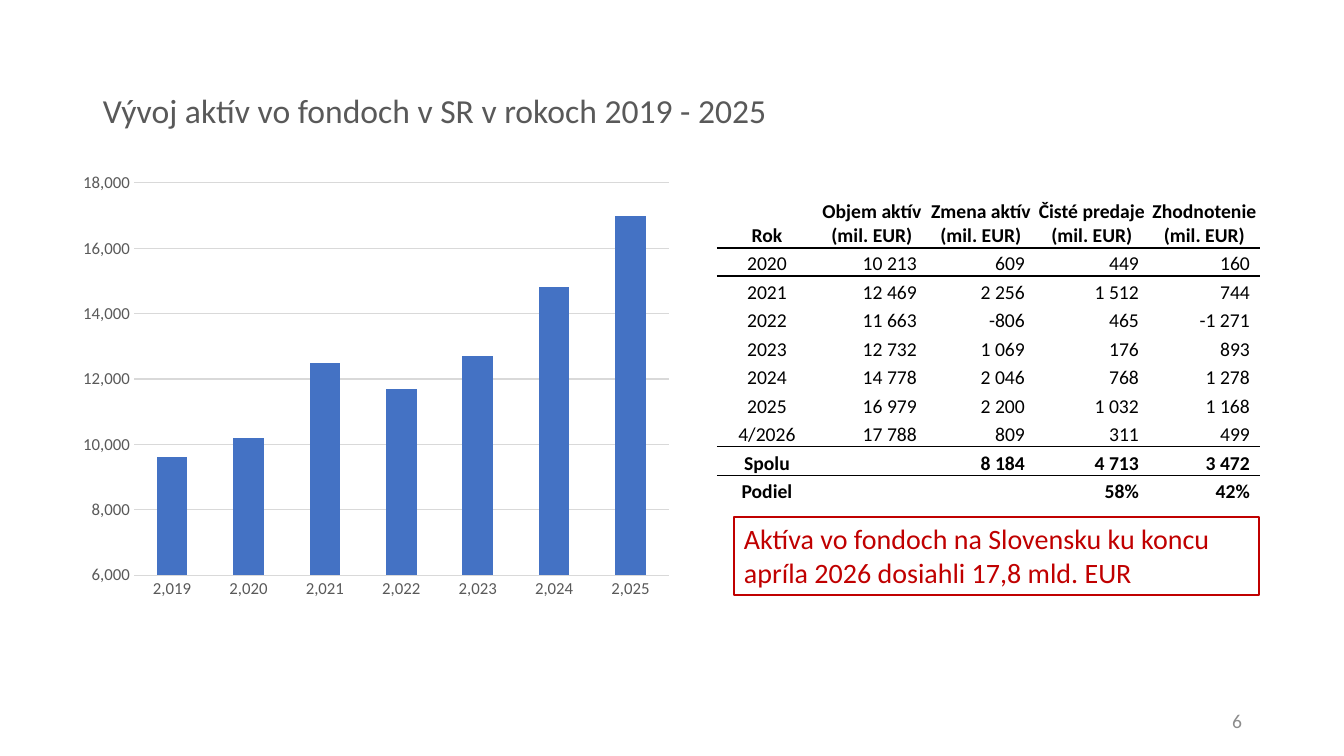
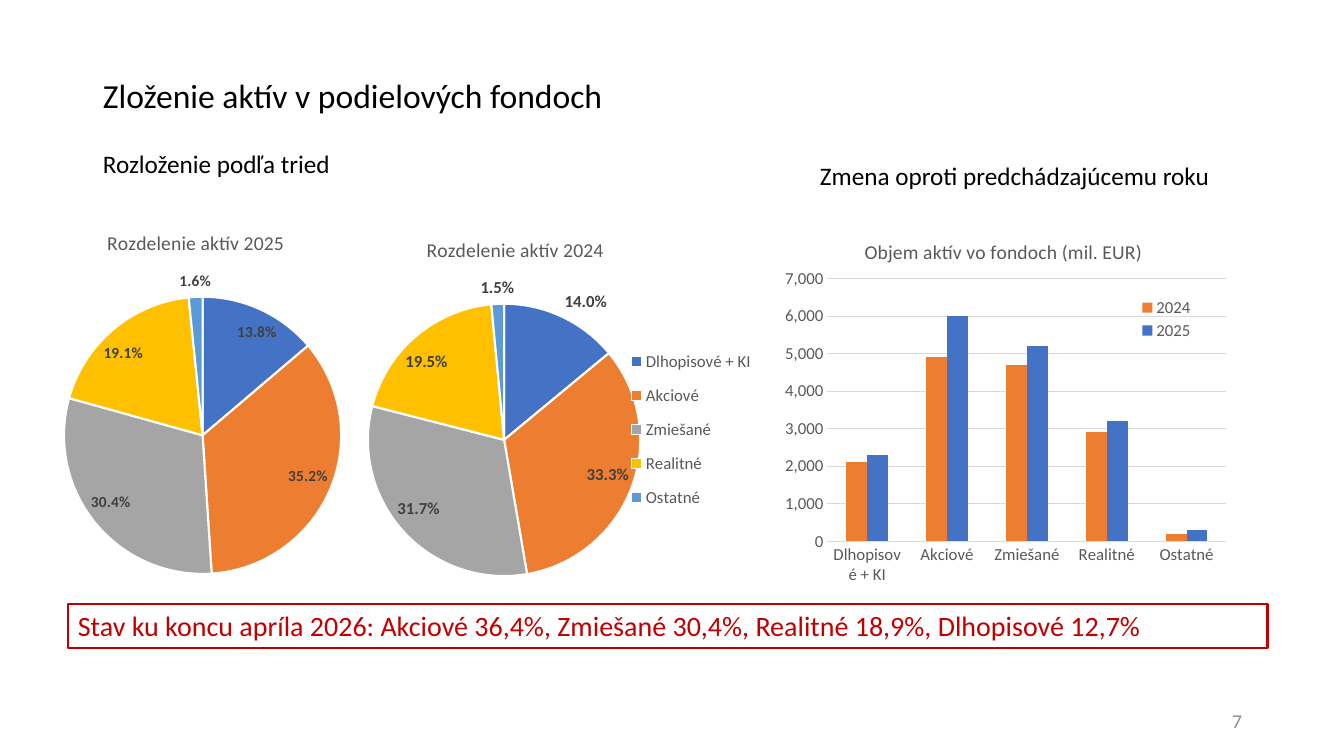
"""Build two slides on the assets held in Slovak funds."""
from copy import deepcopy
from dataclasses import dataclass
from typing import Any, Optional

from lxml import etree
from pptx import Presentation
from pptx import util as u
from pptx.chart import data
from pptx.dml import color
from pptx.enum import chart as ch, shapes, text
from pptx.oxml import ns

FACE = "Calibri"
BLACK, GREY, PALE, DARK, RED, WHITE = "000000", "595959", "8C8C8C", "404040", "C00000", "FFFFFF"
GRID, BLUE, ORANGE = "D9D9D9", "4472C4", "ED7D31"
SLICES = (BLUE, ORANGE, "A5A5A5", "FFC000", "5B9BD5")
KINDS = ("Dlhopisové + KI", "Akciové", "Zmiešané", "Realitné", "Ostatné")
PLAIN = "{2D5ABB26-0587-4C30-8999-92F81FD0307C}"
LEFT, MID, RIGHT = text.PP_ALIGN.LEFT, text.PP_ALIGN.CENTER, text.PP_ALIGN.RIGHT
TOP, HALF = text.MSO_ANCHOR.TOP, text.MSO_ANCHOR.MIDDLE
Box = tuple[int, int, int, int]


@dataclass
class Label:
    words: str
    box: Box
    size: int
    ink: str = BLACK
    align: Any = LEFT
    anchor: Any = TOP
    space: float = 1.0
    frame: bool = False


@dataclass
class Graph:
    box: Box
    cats: tuple
    series: dict[str, tuple]
    title: str = ""
    head: tuple = ()
    plot: tuple = ()
    key: tuple = ()


@dataclass
class Scale:
    low: int
    high: int
    step: int
    gap: int
    inks: tuple
    base: Optional[str] = None


def px(n: int) -> int:
    """Turn pixels into EMU."""
    return round(n * 914400 / 100.8)


def hue(code: str) -> color.RGBColor:
    """Turn a hex string into a colour."""
    return color.RGBColor.from_string(code)


def style(font: Any, size: int, ink: str, bold: bool = False) -> None:
    """Set face, size, colour and weight of a font."""
    font.name, font.size, font.bold = FACE, u.Pt(size), bold
    font.color.rgb = hue(ink)


def write(slide: Any, label: Label) -> None:
    """Draw a text box, or a red frame with text."""
    box = [px(n) for n in label.box]
    if label.frame:
        shape = slide.shapes.add_shape(shapes.MSO_SHAPE.RECTANGLE, *box)
        shape.shadow.inherit = False
        shape.fill.background()
        shape.line.color.rgb = hue(RED)
        shape.line.width = u.Pt(2)
    else:
        shape = slide.shapes.add_textbox(*box)
    body = shape.text_frame
    body.word_wrap = True
    body.vertical_anchor = label.anchor
    body.text = label.words
    para = body.paragraphs[0]
    para.alignment, para.line_spacing = label.align, label.space
    style(para.runs[0].font, label.size, label.ink)


def title(slide: Any, words: str, box: Box, ink: str) -> None:
    """Draw the slide title."""
    write(slide, Label(words, box, 24, ink, anchor=HALF, space=0.9))


def number(slide: Any, page: int) -> None:
    """Draw the page number."""
    write(slide, Label(str(page), (950, 701, 302, 40), 14, PALE, RIGHT, HALF))


def callout(slide: Any, words: str, box: Box) -> None:
    """Draw the framed red message."""
    write(slide, Label(words, box, 20, RED, frame=True))


def place(node: Any, spot: int, sides: tuple, inner: bool = False) -> None:
    """Give a chart part a fixed place."""
    for old in node.findall(ns.qn("c:layout")):
        node.remove(old)
    layout = etree.Element(ns.qn("c:layout"))
    manual = etree.SubElement(layout, ns.qn("c:manualLayout"))
    pairs = [("layoutTarget", "inner")] if inner else []
    pairs += [("xMode", "edge"), ("yMode", "edge"), *zip("xywh", sides)]
    for tag, val in pairs:
        etree.SubElement(manual, ns.qn(f"c:{tag}")).set("val", str(val))
    node.insert(spot, layout)


def draw(slide: Any, kind: Any, graph: Graph) -> Any:
    """Add a chart with its title, plot area and legend."""
    table = data.CategoryChartData()
    table.categories = graph.cats
    if not isinstance(graph.cats[0], str):
        table.categories.number_format = "#,##0"
    for name, vals in graph.series.items():
        table.add_series(name, vals)
    chart = slide.shapes.add_chart(kind, *(px(n) for n in graph.box), table).chart
    style(chart.font, 10, BLACK)
    chart.has_title = bool(graph.title)
    if graph.title:
        chart.chart_title.text_frame.text = graph.title
        style(chart.chart_title.text_frame.paragraphs[0].runs[0].font, 14, GREY)
        place(chart.chart_title._element, 1, graph.head)
    if graph.plot:
        place(chart._chartSpace.chart.plotArea, 0, graph.plot, True)
    chart.has_legend = bool(graph.key)
    if graph.key:
        chart.legend.position = ch.XL_LEGEND_POSITION.RIGHT
        chart.legend.include_in_layout = False
        style(chart.legend.font, 12, GREY)
        place(chart.legend._element, 1, graph.key)
    return chart


def bars(slide: Any, graph: Graph, scale: Scale) -> None:
    """Add a column chart."""
    chart = draw(slide, ch.XL_CHART_TYPE.COLUMN_CLUSTERED, graph)
    plot = chart.plots[0]
    plot.gap_width, plot.overlap, plot.vary_by_categories = scale.gap, 0, False
    for row, ink in zip(plot.series, scale.inks):
        row.format.fill.solid()
        row.format.fill.fore_color.rgb = hue(ink)
        row.invert_if_negative = False
    cat, val = chart.category_axis, chart.value_axis
    for axis in (cat, val):
        axis.major_tick_mark = axis.minor_tick_mark = ch.XL_TICK_MARK.NONE
        axis.format.line.fill.background()
        style(axis.tick_labels.font, 12, GREY)
    if scale.base:
        cat.format.line.color.rgb = hue(scale.base)
        cat.format.line.width = u.Pt(0.75)
    val.minimum_scale, val.maximum_scale = scale.low, scale.high
    val.major_unit = scale.step
    val.tick_labels.number_format = "#,##0"
    val.tick_labels.number_format_is_linked = False
    grid = val.major_gridlines.format.line
    grid.color.rgb, grid.width = hue(GRID), u.Pt(0.75)


def pie(slide: Any, graph: Graph, size: int, out: Optional[int] = None) -> None:
    """Add a pie chart, with one label set outside if asked."""
    plot = draw(slide, ch.XL_CHART_TYPE.PIE, graph).plots[0]
    plot.vary_by_categories = True
    row = plot.series[0]
    for i, ink in enumerate(SLICES):
        form = row.points[i].format
        form.fill.solid()
        form.fill.fore_color.rgb = hue(ink)
        form.line.color.rgb, form.line.width = hue(WHITE), u.Pt(1.5)
    tags = row.data_labels
    tags.show_percentage, tags.show_value = True, False
    tags.number_format, tags.number_format_is_linked = "0.0%", False
    tags.position = ch.XL_LABEL_POSITION.BEST_FIT
    style(tags.font, size, DARK, True)
    if out is not None:
        root = tags._element
        tag = etree.Element(ns.qn("c:dLbl"))
        etree.SubElement(tag, ns.qn("c:idx")).set("val", str(out))
        tag.extend(deepcopy(kid) for kid in root if kid.tag != ns.qn("c:showLeaderLines"))
        tag.find(ns.qn("c:dLblPos")).set("val", "outEnd")
        root.insert(0, tag)


def rule(cell: Any, side: str) -> None:
    """Draw a thin black border on one side of a cell."""
    line = etree.Element(ns.qn(f"a:{side}"), w=str(u.Pt(1)))
    fill = etree.SubElement(line, ns.qn("a:solidFill"))
    etree.SubElement(fill, ns.qn("a:srgbClr")).set("val", BLACK)
    cell._tc.get_or_add_tcPr().insert(0, line)


def grid(slide: Any, rows: list[tuple], spot: tuple, wide: tuple, high: list[int]) -> None:
    """Add the table of yearly figures."""
    box = (*spot, sum(wide), sum(high))
    table = slide.shapes.add_table(len(rows), len(wide), *(px(n) for n in box)).table
    table.first_row = table.horz_banding = False
    table._tbl.tblPr.find(ns.qn("a:tableStyleId")).text = PLAIN
    for col, n in zip(table.columns, wide):
        col.width = px(n)
    last = len(rows) - 3
    for i, row in enumerate(rows):
        table.rows[i].height = px(high[i])
        for j, words in enumerate(row):
            cell = table.cell(i, j)
            mid = i == 0 or j == 0
            cell.fill.background()
            cell.vertical_anchor = text.MSO_ANCHOR.BOTTOM
            cell.margin_left = cell.margin_top = px(1)
            cell.margin_right, cell.margin_bottom = px(1 if mid else 10), 0
            cell.text = words
            para = cell.text_frame.paragraphs[0]
            para.alignment = MID if mid else RIGHT
            for run in para.runs:
                style(run.font, 14, BLACK, i == 0 or i > last)
            if not words:
                etree.SubElement(para._p, ns.qn("a:endParaRPr"), sz="1400")
            if i in (0, last):
                rule(cell, "lnB")
            if i in (1, last + 1):
                rule(cell, "lnT")


def growth(slide: Any) -> None:
    """Build the slide on yearly growth."""
    title(slide, "Vývoj aktív vo fondoch v SR v rokoch 2019 - 2025", (93, 40, 1204, 146), GREY)
    number(slide, 6)
    callout(slide, "Aktíva vo fondoch na Slovensku ku koncu apríla 2026 dosiahli 17,8 mld. EUR",
            (734, 517, 525, 78))
    sums = (9600, 10200, 12500, 11700, 12700, 14800, 17000)
    bars(slide, Graph((71, 164, 610, 444), tuple(range(2019, 2026)), {"Objem aktív": sums}),
         Scale(6000, 18000, 2000, 150, (BLUE,)))
    heads = ("Objem aktív", "Zmena aktív", "Čisté predaje", "Zhodnotenie")
    rows = [
        ("Rok", *(f"{head} (mil. EUR)" for head in heads)),
        ("2020", "10 213", "609", "449", "160"),
        ("2021", "12 469", "2 256", "1 512", "744"),
        ("2022", "11 663", "-806", "465", "-1 271"),
        ("2023", "12 732", "1 069", "176", "893"),
        ("2024", "14 778", "2 046", "768", "1 278"),
        ("2025", "16 979", "2 200", "1 032", "1 168"),
        ("4/2026", "17 788", "809", "311", "499"),
        ("Spolu", "", "8 184", "4 713", "3 472"),
        ("Podiel", "", "", "58%", "42%"),
    ]
    grid(slide, rows, (717, 178), (100, 110, 108, 114, 111), [70] + [28 + i % 2 for i in range(9)])


def shares(slide: Any) -> None:
    """Build the slide on the mix of assets."""
    title(slide, "Zloženie aktív v podielových fondoch", (93, 40, 1159, 115), BLACK)
    number(slide, 7)
    write(slide, Label("Rozloženie podľa tried", (93, 143, 283, 40), 18))
    write(slide, Label("Zmena oproti predchádzajúcemu roku", (810, 155, 458, 40), 18))
    pie(slide, Graph((344, 220, 416, 419), KINDS, {"2024": (14, 33.3, 31.7, 19.5, 1.5)},
                     "Rozdelenie aktív 2024", (0.19, 0.03), (0.05, 0.2, 0.67, 0.65),
                     (0.68, 0.28, 0.31, 0.44)), 12, 0)
    pie(slide, Graph((20, 184, 440, 419), KINDS, {"2025": (13.8, 35.2, 30.4, 19.1, 1.6)},
                     "Rozdelenie aktív 2025", (0.19, 0.1), (0.1, 0.21, 0.63, 0.78)), 11)
    sums = {"2024": (2100, 4900, 4700, 2900, 200), "2025": (2300, 6000, 5200, 3200, 300)}
    bars(slide, Graph((760, 206, 481, 404), KINDS, sums, "Objem aktív vo fondoch (mil. EUR)",
                      (0.21, 0.07), (0.14, 0.18, 0.83, 0.65), (0.78, 0.22, 0.13, 0.12)),
         Scale(0, 7000, 1000, 182, (ORANGE, BLUE), GRID))
    callout(slide, "Stav ku koncu apríla 2026: Akciové 36,4%, Zmiešané 30,4%, "
                   "Realitné 18,9%, Dlhopisové 12,7%", (68, 604, 1200, 44))


def main() -> None:
    """Build and save the slides."""
    deck = Presentation()
    deck.slide_width, deck.slide_height = px(1344), px(756)
    for build in (growth, shares):
        build(deck.slides.add_slide(deck.slide_layouts[6]))
    deck.save("out.pptx")


if __name__ == "__main__":
    main()
